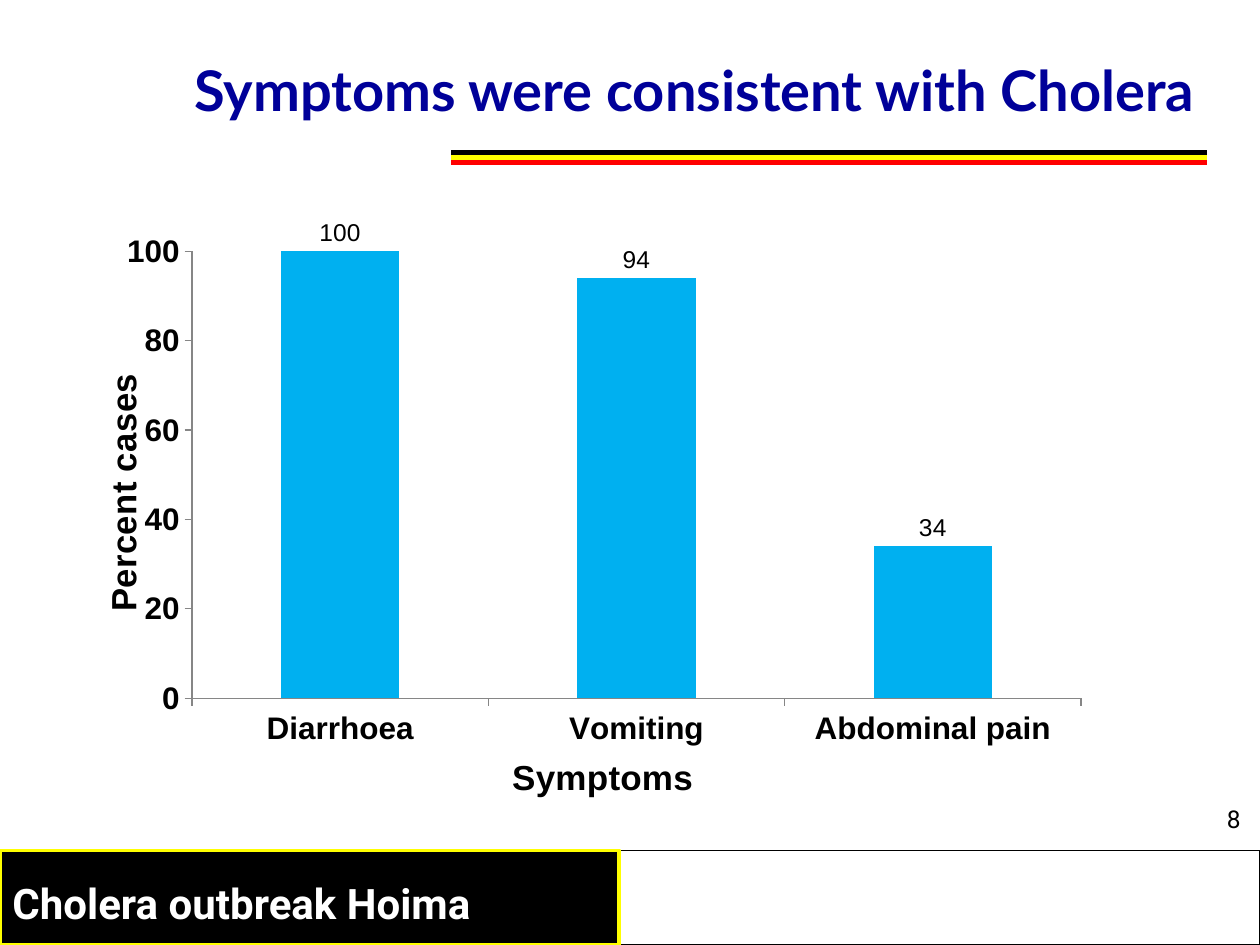
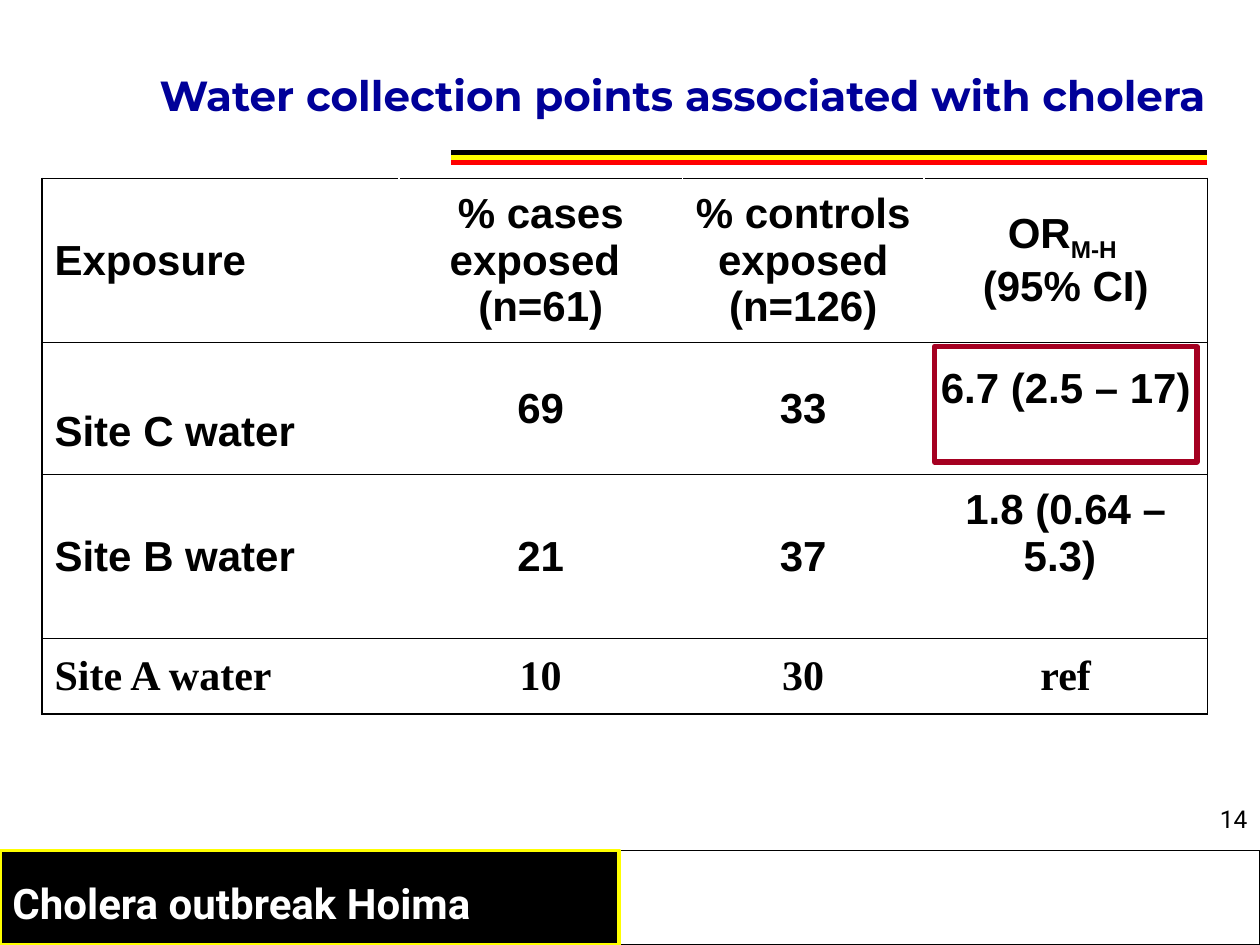
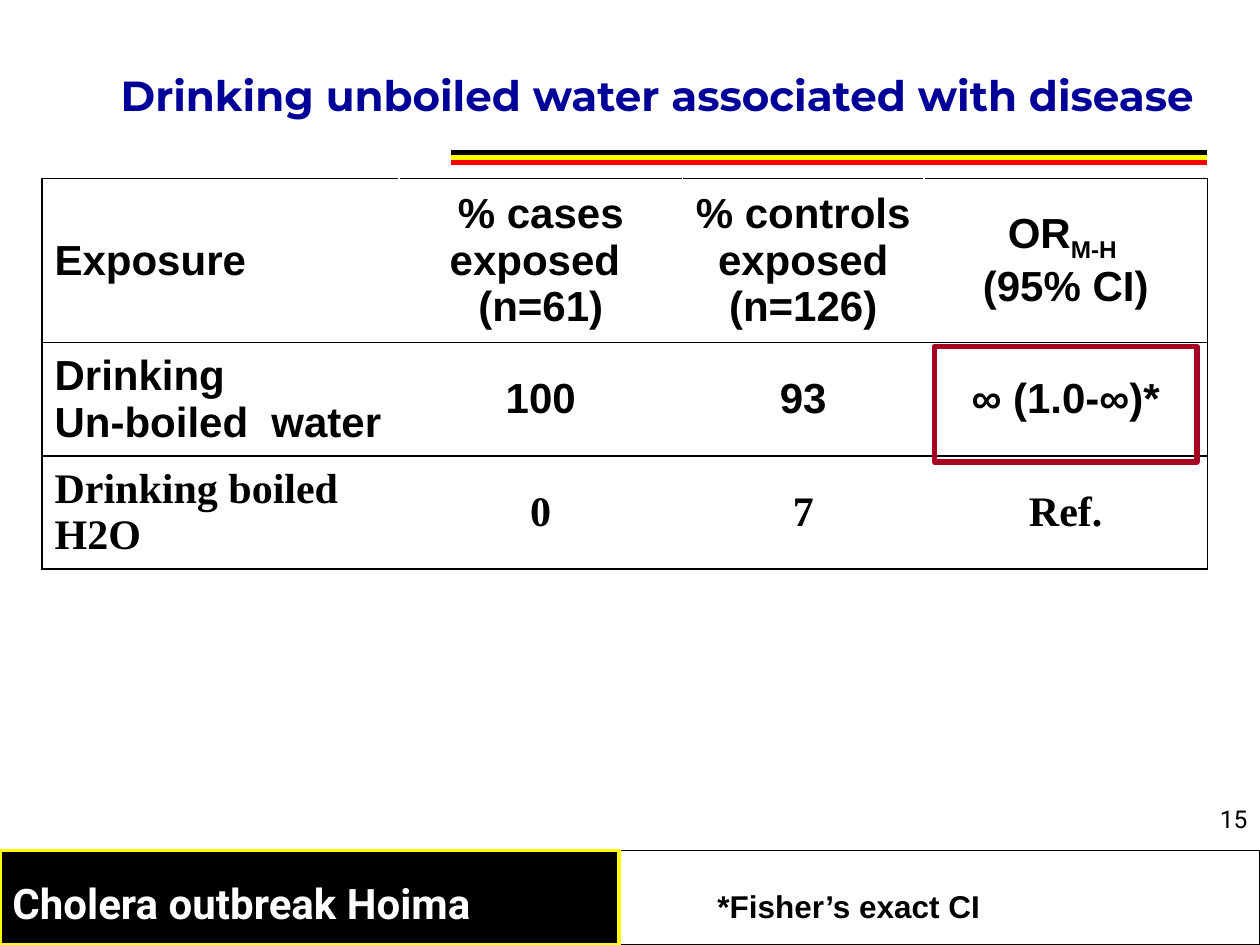
from lxml.etree import SubElement
from pptx import Presentation
from pptx.chart.data import CategoryChartData
from pptx.dml.color import RGBColor
from pptx.enum.chart import XL_CHART_TYPE, XL_LABEL_POSITION, XL_TICK_MARK
from pptx.enum.shapes import MSO_CONNECTOR, MSO_SHAPE
from pptx.enum.text import MSO_ANCHOR, MSO_AUTO_SIZE, PP_ALIGN
from pptx.oxml import parse_xml
from pptx.oxml.ns import nsdecls, qn
from pptx.util import Pt

colour = RGBColor.from_string
BLACK, WHITE, YELLOW, RED = "000000", "FFFFFF", "FFFF00", "FF0000"
TITLE_BLUE, BAR_BLUE, HIGHLIGHT, AXIS_GREY = "000099", "00B0F0", "A50021", "868686"
LEFT, CENTER, RIGHT = PP_ALIGN.LEFT, PP_ALIGN.CENTER, PP_ALIGN.RIGHT


def style_text(text_frame, font_name, size, text_colour, bold=True, align=LEFT):
    for paragraph in text_frame.paragraphs:
        paragraph.alignment = align
        for run in paragraph.runs:
            run.font.name = font_name
            run.font.size = Pt(size)
            run.font.bold = bold
            run.font.color.rgb = colour(text_colour)


def place_in_chart(element, index, **fractions):
    """Give a chart part a manual layout, in fractions of the chart."""
    for old_layout in element.findall(qn("c:layout")):
        element.remove(old_layout)
    layout = parse_xml(f"<c:layout {nsdecls('c')}><c:manualLayout/></c:layout>")
    if "w" in fractions:
        SubElement(layout[0], qn("c:layoutTarget")).set("val", "inner")
    for side in ("x", "y"):
        SubElement(layout[0], qn(f"c:{side}Mode")).set("val", "edge")
    for key, value in fractions.items():
        SubElement(layout[0], qn(f"c:{key}")).set("val", str(value))
    element.insert(index, layout)


presentation = Presentation()
presentation.slide_width, presentation.slide_height = Pt(720), Pt(540)

# Title, font, size, title box and page number of each slide
chart_title_box = (30, 18, 660, 66)
table_title_box = (18, 12, 678, 84)
slide_heads = [
    ("Symptoms were consistent with Cholera", "Lato", 32, chart_title_box, "8"),
    ("Water collection points associated with cholera", "Montserrat", 24, table_title_box, "14"),
    ("Drinking unboiled water associated with disease ", "Montserrat", 24, table_title_box, "15"),
]

# Shared frame: title, stripes, footer boxes, footer text, page number
for title_text, title_font, title_size, title_box, page_number in slide_heads:
    slide = presentation.slides.add_slide(presentation.slide_layouts[5])
    title = slide.shapes.title
    title.left, title.top, title.width, title.height = map(Pt, title_box)
    title.text_frame.text = title_text
    title.text_frame.auto_size = MSO_AUTO_SIZE.NONE
    title.text_frame.vertical_anchor = MSO_ANCHOR.MIDDLE
    style_text(title.text_frame, title_font, title_size, TITLE_BLUE, align=RIGHT)

    for left, width, fill, line, weight in [(354, 366, None, BLACK, 1), (0, 354, BLACK, YELLOW, 2.25)]:
        box = slide.shapes.add_shape(MSO_SHAPE.RECTANGLE, Pt(left), Pt(486), Pt(width), Pt(54))
        box.shadow.inherit = False
        if fill:
            box.fill.solid()
            box.fill.fore_color.rgb = colour(fill)
        else:
            box.fill.background()
        box.line.color.rgb = colour(line)
        box.line.width = Pt(weight)

    for number, stripe_colour in enumerate((BLACK, YELLOW, RED)):
        top = Pt(87 + 3 * number)
        stripe = slide.shapes.add_connector(MSO_CONNECTOR.STRAIGHT, Pt(258), top, Pt(690), top)
        stripe.line.color.rgb = colour(stripe_colour)
        stripe.line.width = Pt(3)
        SubElement(stripe._element.spPr, qn("a:effectLst"))

    for text, box, size, text_colour, bold, align in [
        ("Cholera outbreak Hoima", (0, 498, 336, 36), 24, WHITE, True, LEFT),
        (page_number, (690, 456, 30, 24), 14, BLACK, False, CENTER),
    ]:
        text_frame = slide.shapes.add_textbox(*map(Pt, box)).text_frame
        text_frame.word_wrap = True
        text_frame.text = text
        style_text(text_frame, "Roboto", size, text_colour, bold, align)

chart_slide, sites_slide, boiling_slide = presentation.slides

# Symptom chart
chart_data = CategoryChartData()
chart_data.categories = ["Diarrhoea", "Vomiting", "Abdominal pain"]
chart_data.add_series("Series 1", (100, 94, 34))
chart = chart_slide.shapes.add_chart(
    XL_CHART_TYPE.COLUMN_CLUSTERED, Pt(48), Pt(120), Pt(588), Pt(342), chart_data).chart
chart.has_legend = False
chart.has_title = False
chart.font.name = "Arial"
chart.font.size = Pt(10)
chart.font.color.rgb = colour(BLACK)
place_in_chart(chart._chartSpace.chart.plotArea, 0, x=0.105, y=0.07, w=0.864, h=0.755)

plot = chart.plots[0]
plot.gap_width = 150
plot.vary_by_categories = False
plot.series[0].format.fill.solid()
plot.series[0].format.fill.fore_color.rgb = colour(BAR_BLUE)
plot.has_data_labels = True
labels = plot.data_labels
labels.show_value = True
labels.position = XL_LABEL_POSITION.OUTSIDE_END
labels.font.size = Pt(14)

value_axis = chart.value_axis
value_axis.minimum_scale, value_axis.maximum_scale, value_axis.major_unit = 0, 100, 20
for axis, axis_text, x, y in [
    (chart.category_axis, "Symptoms", 0.41, 0.91),
    (value_axis, "Percent cases", 0.01, 0.27),
]:
    axis.has_major_gridlines = False
    axis.major_tick_mark = XL_TICK_MARK.OUTSIDE
    axis.format.line.color.rgb = colour(AXIS_GREY)
    axis.tick_labels.font.size = Pt(18)
    axis.tick_labels.font.bold = True
    axis_title = axis.axis_title
    axis_title.text_frame.text = axis_text
    style_text(axis_title.text_frame, "Arial", 20, BLACK, align=CENTER)
    place_in_chart(axis_title._element, 1, x=x, y=y)
value_axis.axis_title.text_frame._txBody.bodyPr.set("rot", "-5400000")

# Exposure tables: row heights and rows below the common header
header = ("Exposure", "% cases exposed \n(n=61)", "% controls exposed\n(n=126)", "OR\n(95% CI)")
column_widths = (204, 162, 138, 162)
exposure_tables = [
    (sites_slide, (93.6, 75.6, 93.6, 43.2), [
        ("Site C water", "69", "33", "6.7 (2.5 – 17)"),
        ("Site B water", "21", "37", "1.8 (0.64 – 5.3) "),
        ("Site A water", "10", "30", "ref"),
    ]),
    (boiling_slide, (93.6, 64.8, 64.8), [
        ("Drinking\nUn-boiled  water", "100", "93", "∞ (1.0-∞)*"),
        ("Drinking boiled H2O", "0", "7", "Ref."),
    ]),
]
for slide, row_heights, rows in exposure_tables:
    table = slide.shapes.add_table(
        len(row_heights), 4, Pt(24), Pt(102), Pt(sum(column_widths)), Pt(sum(row_heights))).table
    table.first_row = table.horz_banding = False
    for column, width in zip(table.columns, column_widths):
        column.width = Pt(width)
    for row, height in zip(table.rows, row_heights):
        row.height = Pt(height)

    for row_index, texts in enumerate([header, *rows]):
        font_name = "Times New Roman" if row_index == len(rows) else "Arial"
        for column_index, text in enumerate(texts):
            cell = table.cell(row_index, column_index)
            cell.text_frame.text = text
            if text == header[3]:
                subscript = cell.text_frame.paragraphs[0].add_run()
                subscript.text = "M-H "
                subscript.font._element.set("baseline", "-25000")
            style_text(cell.text_frame, font_name, 24, BLACK, align=CENTER if column_index else LEFT)
            cell.vertical_anchor = MSO_ANCHOR.MIDDLE

            # Rules above and below each row, and at the outer sides
            edges = ["lnL"] * (column_index == 0) + ["lnR"] * (column_index == 3) + ["lnT", "lnB"]
            for edge in edges:
                cell._tc.get_or_add_tcPr().append(parse_xml(
                    f'<a:{edge} {nsdecls("a")} w="12700"><a:solidFill>'
                    f'<a:srgbClr val="{BLACK}"/></a:solidFill></a:{edge}>'))
            cell.fill.solid()
            cell.fill.fore_color.rgb = colour(WHITE)

    # Frame around the key odds ratio
    frame = slide.shapes.add_shape(MSO_SHAPE.RECTANGLE, Pt(534), Pt(198), Pt(150), Pt(66))
    frame.shadow.inherit = False
    frame.fill.background()
    frame.line.color.rgb = colour(HIGHLIGHT)
    frame.line.width = Pt(3)

# Site cells that sit lower or higher than the middle of their row
sites_table = next(shape.table for shape in sites_slide.shapes if shape.has_table)
sites_table.cell(1, 0).margin_top = Pt(30)
for row_index, margin in ((1, 26), (2, 30)):
    sites_table.cell(row_index, 3).margin_bottom = Pt(margin)

# Footnote in the empty footer box
footnote = boiling_slide.shapes.add_textbox(Pt(402), Pt(503.5), Pt(166), Pt(29)).text_frame
footnote.word_wrap = False
footnote.text = "*Fisher’s exact CI"
style_text(footnote, "Arial", 18, BLACK, align=CENTER)

presentation.save("out.pptx")
